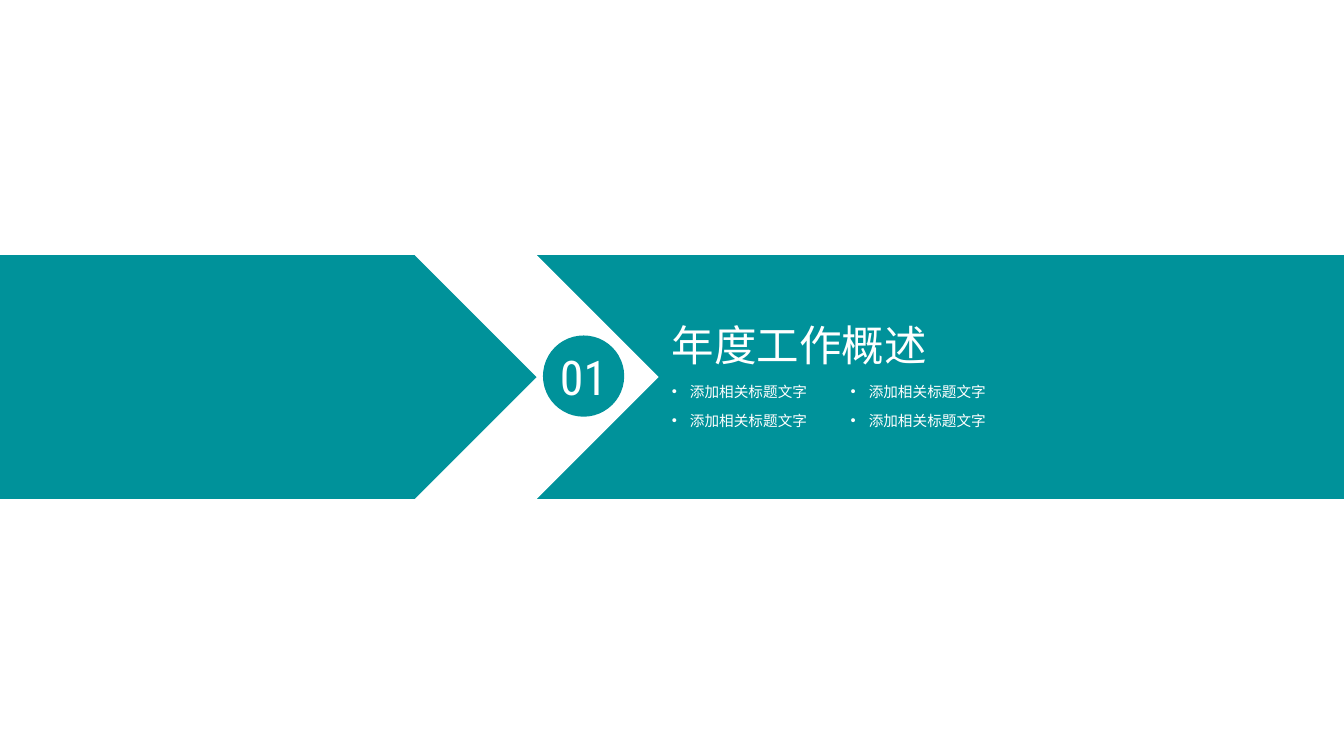
from lxml import etree
from pptx import Presentation
from pptx.dml.color import RGBColor
from pptx.enum.shapes import MSO_SHAPE
from pptx.enum.text import MSO_ANCHOR, MSO_AUTO_SIZE, PP_ALIGN
from pptx.oxml.ns import qn
from pptx.util import Inches, Pt

RECTANGLE, CHEVRON, OVAL = MSO_SHAPE.RECTANGLE, MSO_SHAPE.CHEVRON, MSO_SHAPE.OVAL
MIDDLE, TOP = MSO_ANCHOR.MIDDLE, MSO_ANCHOR.TOP
CENTER, LEFT = PP_ALIGN.CENTER, PP_ALIGN.LEFT
GROW = MSO_AUTO_SIZE.SHAPE_TO_FIT_TEXT

COLORS = {"teal": "00929A", "white": "FFFFFF"}
FONT = "Roboto Condensed"
NO_MARGINS = dict.fromkeys(
    ("margin_left", "margin_top", "margin_right", "margin_bottom"), 0)


class SectionPage:
    """Holds the style and the current slide."""

    def __init__(self, page):
        self.page = page

    def shape(self, kind, left, top, width, height, color):
        shape = self.page.shapes.add_shape(
            kind, Inches(left), Inches(top), Inches(width), Inches(height))
        shape.shadow.inherit = False
        shape.fill.solid()
        shape.fill.fore_color.rgb = RGBColor.from_string(COLORS[color])
        shape.line.fill.background()
        return shape

    def text_box(self, left, top, width, height):
        return self.page.shapes.add_textbox(
            Inches(left), Inches(top), Inches(width), Inches(height))

    def add_text(self, box, text, size, align=LEFT, **frame_format):
        """Put one white paragraph into the box and return it."""
        frame = box.text_frame
        for name, value in frame_format.items():
            setattr(frame, name, value)
        para = frame.paragraphs[0]
        para.alignment = align
        span = para.add_run()
        span.text = text
        for name, value in {"name": FONT, "size": Pt(size)}.items():
            setattr(span.font, name, value)
        span.font.color.rgb = RGBColor.from_string(COLORS["white"])
        return para

    def bullet(self, left, top, text):
        box = self.text_box(left, top, 1.63, 0.29)
        para = self.add_text(box, text, 11, vertical_anchor=TOP,
                             word_wrap=False, auto_size=GROW)
        para.level = 1
        properties = para._p.get_or_add_pPr()
        indent = Inches(0.19)
        properties.set("marL", str(indent))
        properties.set("indent", str(-indent))
        etree.SubElement(properties, qn("a:buFont"), typeface="Arial")
        etree.SubElement(properties, qn("a:buChar"), char="•")


def main():
    deck = Presentation()
    deck.slide_width, deck.slide_height = Inches(14.06), Inches(7.91)
    section = SectionPage(deck.slides.add_slide(deck.slide_layouts[6]))

    band_top, band_height = 2.67, 2.55
    section.shape(RECTANGLE, 0, band_top, 14.06, band_height, "teal")
    section.shape(CHEVRON, 4.34, band_top, band_height, band_height, "white")

    title = section.text_box(7.03, 3.33, 2.7, 0.54)
    section.add_text(title, "年度工作概述", 32, vertical_anchor=MIDDLE,
                     word_wrap=True, auto_size=GROW, **NO_MARGINS)
    number = section.shape(OVAL, 5.68, 3.51, 0.85, 0.85, "teal")
    section.add_text(number, "01", 36, CENTER, vertical_anchor=MIDDLE, **NO_MARGINS)

    for row in range(2):
        for column in range(2):
            section.bullet(6.93 + 1.87 * column, 3.96 + 0.3 * row, "添加相关标题文字")

    deck.save("out.pptx")


if __name__ == "__main__":
    main()
